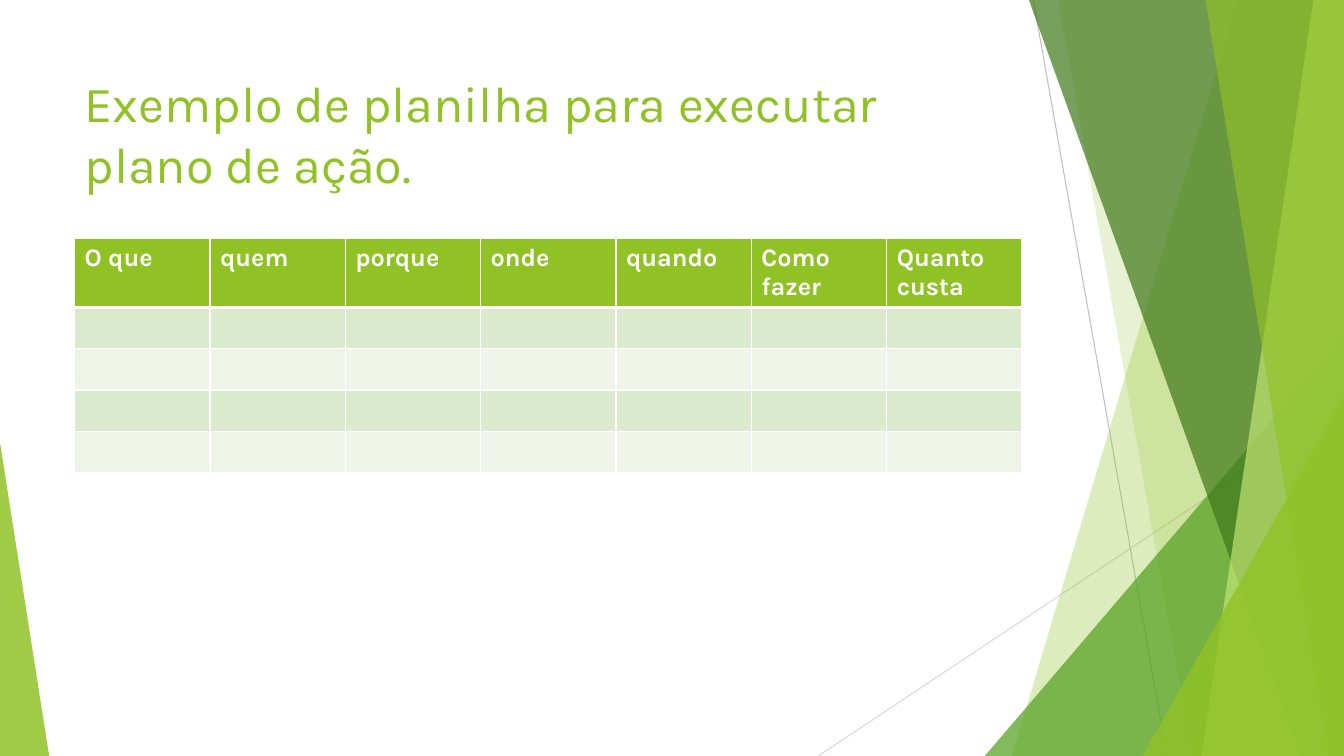
from lxml import etree
from pptx import Presentation
from pptx.dml.color import RGBColor
from pptx.enum.shapes import MSO_CONNECTOR, MSO_SHAPE
from pptx.enum.text import MSO_ANCHOR, PP_ALIGN
from pptx.oxml.ns import qn
from pptx.util import Cm, Pt

LINE = MSO_CONNECTOR.STRAIGHT
WEDGE = MSO_SHAPE.ISOSCELES_TRIANGLE
TOP = MSO_ANCHOR.TOP
LEFT = PP_ALIGN.LEFT
FONT = "Karla"
HUES = {
    "lime": "90C226", "leaf": "54A021", "dark": "3F7819", "pale": "C0E474",
    "gray": "BFBFBF", "mist": "D9D9D9", "white": "FFFFFF",
    "band": "DBE9CD", "light": "EEF4E8",
}
HEADS = ["O que", "quem", "porque", "onde", "quando", "Como fazer", "Quanto custa"]


def tint(hue):
    """Return the named colour."""
    return RGBColor.from_string(HUES[hue])


def paint(shape, hue, alpha):
    """Fill a shape with a see-through colour and no outline."""
    shape.shadow.inherit = False
    shape.line.fill.background()
    shape.fill.solid()
    shape.fill.fore_color.rgb = tint(hue)
    color = shape.fill._xPr.find(qn("a:solidFill"))[0]
    etree.SubElement(color, qn("a:alpha"), val=str(alpha * 1000))


def write(frame, text, size, hue, bold=False):
    """Add one styled run to a text frame."""
    para = frame.paragraphs[0]
    para.alignment = LEFT
    run = para.add_run()
    run.text = text
    run.font.name = FONT
    run.font.size = Pt(size)
    run.font.bold = bold
    run.font.color.rgb = tint(hue)


def ray(slide, start, end, hue):
    """Draw a thin line between two points."""
    line = slide.shapes.add_connector(LINE, *map(Cm, start + end))
    line.line.color.rgb = tint(hue)
    line.line.width = Pt(0.75)
    etree.SubElement(line._element.spPr, qn("a:effectLst"))


def wedge(slide, box, tip, hue, alpha):
    """Draw a triangle whose tip sits at the given share of its width."""
    shape = slide.shapes.add_shape(WEDGE, *map(Cm, box))
    shape.adjustments[0] = tip
    paint(shape, hue, alpha)


def facets(slide, left, top, width, height):
    """Layer the lines and facets of the right panel."""
    right, base = left + width, top + height

    def pane(high, low, hue, alpha):
        """Draw a facet from a slanted edge to the right side."""
        path = slide.shapes.build_freeform(Cm(left + high), Cm(top))
        spots = [(right, top), (right, base), (left + low, base)]
        path.add_line_segments([(Cm(x), Cm(y)) for x, y in spots])
        paint(path.convert_to_shape(), hue, alpha)

    def corner(x, y, hue, alpha):
        """Draw a triangle in the lower right corner."""
        box = (left + x, top + y, width - x, height - y)
        wedge(slide, box, 1, hue, alpha)

    ray(slide, (left + 5.42, top), (left + 8.79, base), "gray")
    ray(slide, (right, top + 10.24), (left, base), "mist")
    pane(10.57, 4.88, "lime", 30)
    pane(6.05, 9.43, "lime", 20)
    corner(4.2, 8.46, "leaf", 72)
    pane(5.31, 12.17, "dark", 70)
    pane(12.48, 9.66, "pale", 70)
    pane(9.76, 12.86, "lime", 65)
    corner(8.18, 9.98, "lime", 80)


def title(slide, *box):
    """Place and fill the title."""
    shape = slide.shapes.title
    shape.left, shape.top, shape.width, shape.height = map(Cm, box)
    frame = shape.text_frame
    frame.word_wrap = True
    frame.vertical_anchor = TOP
    write(frame, "Exemplo de planilha para executar plano de ação.", 36, "lime")


def edge(cell, base):
    """Give a cell white borders, with its own bottom width."""
    props = cell._tc.get_or_add_tcPr()
    for side, size in zip("LRTB", (1, 1, 1, base)):
        line = etree.SubElement(props, qn(f"a:ln{side}"), w=str(Pt(size)))
        fill = etree.SubElement(line, qn("a:solidFill"))
        etree.SubElement(fill, qn("a:srgbClr"), val=HUES["white"])


def plan(slide, left, top, width, height):
    """Build the action plan table with four empty rows."""
    head = 1.72
    step = (height - head) / 4
    box = map(Cm, (left, top, width, height))
    grid = slide.shapes.add_table(5, len(HEADS), *box).table
    for col in grid.columns:
        col.width = Cm(width / len(HEADS))
    for r, row in enumerate(grid.rows):
        row.height = Cm(step if r else head)
        hue = ("light", "band")[r % 2] if r else "lime"
        for cell, text in zip(row.cells, HEADS):
            edge(cell, 1 if r else 3)
            cell.fill.solid()
            cell.fill.fore_color.rgb = tint(hue)
            if r == 0:
                write(cell.text_frame, text, 18, "white", True)


def main():
    """Build and save the slide."""
    deck = Presentation()
    deck.slide_width, deck.slide_height = Cm(33.87), Cm(19.05)
    slide = deck.slides.add_slide(deck.slide_layouts[5])
    facets(slide, 20.62, 0, 13.25, 19.05)
    wedge(slide, (0, 11.15, 1.24, 7.9), 0, "lime", 85)
    title(slide, 1.88, 1.7, 23.88, 3.66)
    plan(slide, 1.88, 6, 23.88, 5.88)
    deck.save("out.pptx")


if __name__ == "__main__":
    main()
